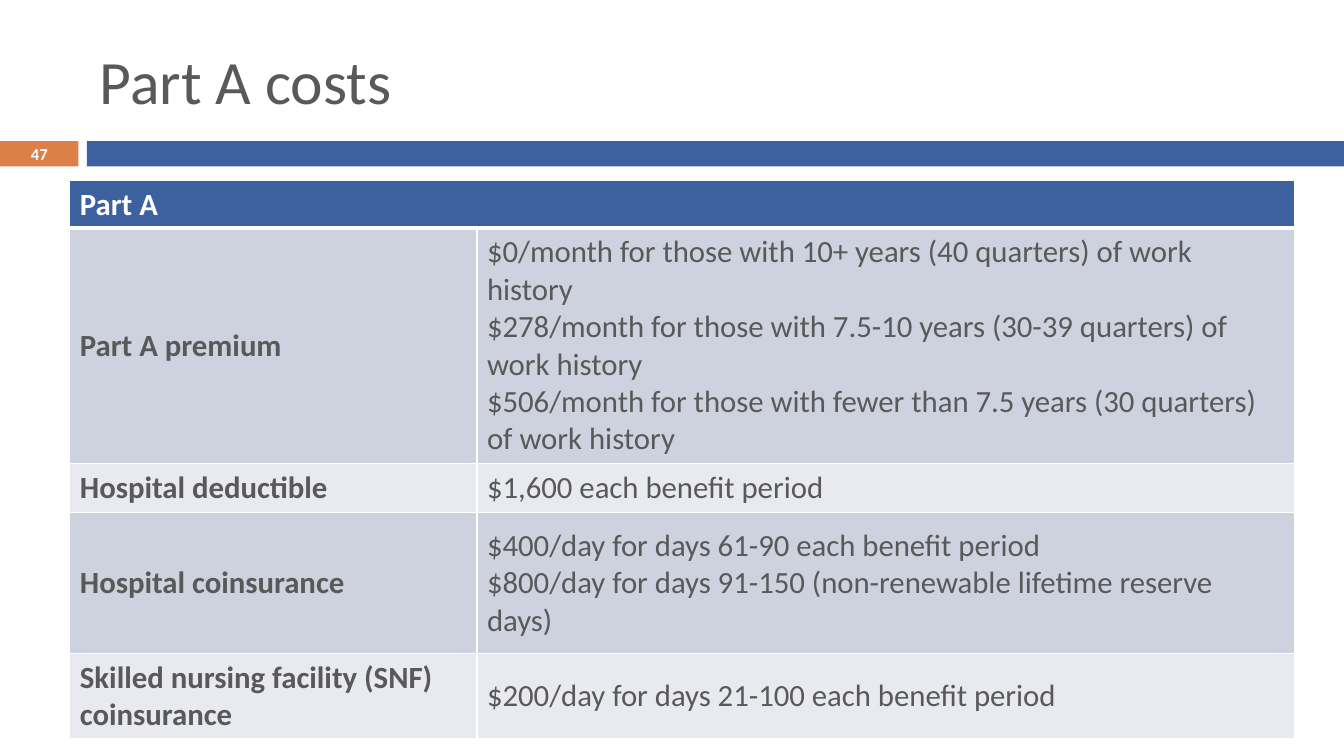
from lxml import etree
from pptx import Presentation
from pptx import util as u
from pptx.dml import color
from pptx.enum import shapes, text
from pptx.oxml import ns

FONT = "Calibri"
WHITE, GRAY, BLUE, ORANGE = "FFFFFF", "595959", "3C619E", "DD8047"
BANDS = ["CED2DF", "E8EAF0"]
COLUMN_WIDTHS = [290.8, 584]
ROW_HEIGHTS = [32, 154.8, 35.3, 100.8, 56.2]
COSTS = [
    ("Part A premium", [
        "$0/month for those with 10+ years (40 quarters) of work history",
        "$278/month for those with 7.5-10 years (30-39 quarters) of work history",
        "$506/month for those with fewer than 7.5 years (30 quarters) of work history",
    ]),
    ("Hospital deductible", ["$1,600 each benefit period"]),
    ("Hospital coinsurance", [
        "$400/day for days 61-90 each benefit period",
        "$800/day for days 91-150 (non-renewable lifetime reserve days)",
    ]),
    ("Skilled nursing facility (SNF) coinsurance",
     ["$200/day for days 21-100 each benefit period"]),
]


def rgb(value):
    return color.RGBColor.from_string(value)


def write(frame, lines, size=22, ink=GRAY, bold=False, align=text.PP_ALIGN.LEFT):
    frame.word_wrap = True
    for index, line in enumerate(lines):
        paragraph = frame.add_paragraph() if index else frame.paragraphs[0]
        paragraph.alignment = align
        run = paragraph.add_run()
        run.text = line
        run.font.name = FONT
        run.font.size = u.Pt(size)
        run.font.bold = bold
        run.font.color.rgb = rgb(ink)


def add_bar(slide, left, width, fill):
    bar = slide.shapes.add_shape(
        shapes.MSO_SHAPE.RECTANGLE, u.Pt(left), u.Pt(100.8), u.Pt(width), u.Pt(18))
    bar.shadow.inherit = False
    bar.fill.solid()
    bar.fill.fore_color.rgb = rgb(fill)
    bar.line.fill.background()


def add_title(slide, wording):
    title = slide.shapes.title
    title.left, title.top = u.Pt(64), u.Pt(18)
    title.width, title.height = u.Pt(856), u.Pt(78)
    title.text_frame.vertical_anchor = text.MSO_ANCHOR.MIDDLE
    write(title.text_frame, [wording], size=44)


def add_page_number(slide, number):
    box = slide.shapes.add_textbox(u.Pt(0), u.Pt(100.1), u.Pt(56.2), u.Pt(19.4))
    box.text_frame.vertical_anchor = text.MSO_ANCHOR.MIDDLE
    write(box.text_frame, [number], size=11.9, ink=WHITE, bold=True,
          align=text.PP_ALIGN.CENTER)


def set_borders(cell, top=1, bottom=1):
    properties = cell._tc.get_or_add_tcPr()
    for side, width in (("L", 1), ("R", 1), ("T", top), ("B", bottom)):
        line = etree.SubElement(properties, ns.qn(f"a:ln{side}"), w=str(u.Pt(width)))
        fill = etree.SubElement(line, ns.qn("a:solidFill"))
        etree.SubElement(fill, ns.qn("a:srgbClr"), val=WHITE)


def fill_cell(cell, fill, lines=(), anchor=text.MSO_ANCHOR.MIDDLE, top=1, bottom=1,
              **style):
    set_borders(cell, top, bottom)
    cell.fill.solid()
    cell.fill.fore_color.rgb = rgb(fill)
    cell.vertical_anchor = anchor
    write(cell.text_frame, lines, **style)


def add_cost_table(slide):
    table = slide.shapes.add_table(
        len(ROW_HEIGHTS), len(COLUMN_WIDTHS), u.Pt(49.9), u.Pt(129.1),
        u.Pt(sum(COLUMN_WIDTHS)), u.Pt(sum(ROW_HEIGHTS))).table
    for column, width in zip(table.columns, COLUMN_WIDTHS):
        column.width = u.Pt(width)
    for row, height in zip(table.rows, ROW_HEIGHTS):
        row.height = u.Pt(height)

    heading, heading_end = table.cell(0, 0), table.cell(0, 1)
    heading.merge(heading_end)
    fill_cell(heading, BLUE, ["Part A"], anchor=text.MSO_ANCHOR.TOP, bottom=3,
              ink=WHITE, bold=True)
    fill_cell(heading_end, BLUE, bottom=3)

    for row, (label, amounts) in enumerate(COSTS, 1):
        band = BANDS[(row - 1) % 2]
        top = 3 if row == 1 else 1
        fill_cell(table.cell(row, 0), band, [label], top=top, bold=True)
        fill_cell(table.cell(row, 1), band, amounts, top=top)


def main():
    deck = Presentation()
    deck.slide_width, deck.slide_height = u.Pt(960), u.Pt(540)
    slide = deck.slides.add_slide(deck.slide_layouts[5])
    add_bar(slide, 0, 56, ORANGE)
    add_bar(slide, 62, 898, BLUE)
    add_title(slide, "Part A costs")
    add_cost_table(slide)
    add_page_number(slide, "47")
    deck.save("out.pptx")


if __name__ == "__main__":
    main()
